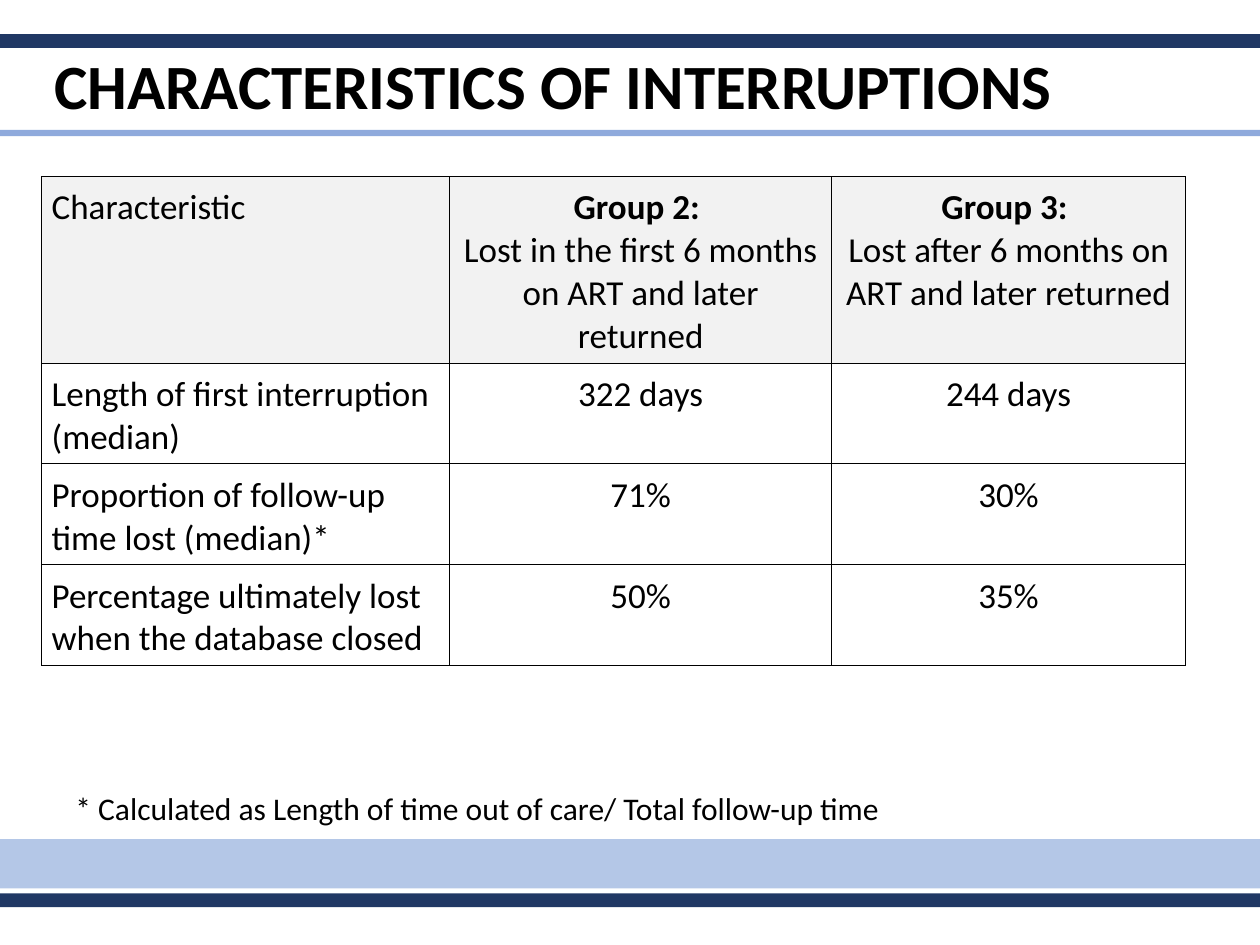
import pptx
import pptx.dml.color
import pptx.enum.shapes
import pptx.enum.text
import pptx.oxml
import pptx.oxml.ns
import pptx.util

RGBColor = pptx.dml.color.RGBColor
Inches = pptx.util.Inches
Pt = pptx.util.Pt
ALIGN = pptx.enum.text.PP_ALIGN
ANCHOR = pptx.enum.text.MSO_ANCHOR

BLACK = RGBColor(0x00, 0x00, 0x00)
WHITE = RGBColor(0xFF, 0xFF, 0xFF)
HEADER_GREY = RGBColor(0xF2, 0xF2, 0xF2)
NAVY = RGBColor(0x20, 0x38, 0x64)
MID_BLUE = RGBColor(0x8F, 0xAA, 0xDC)
PALE_BLUE = RGBColor(0xB4, 0xC7, 0xE7)

SLIDE_WIDTH, SLIDE_HEIGHT = 10, 7.5
BANDS = [
    (6.66, 0.39, PALE_BLUE),
    (7.09, 0.11, NAVY),
    (0.27, 0.11, NAVY),
    (1.03, 0.05, MID_BLUE),
]
COLUMN_WIDTHS = [3.24, 3.03, 2.81]
ROW_HEIGHTS = [1.47, 0.78, 0.78, 0.78]
CELL_MARGINS = {
    "margin_left": Inches(0.08),
    "margin_top": Inches(0.08),
    "margin_right": Inches(0.08),
    "margin_bottom": Inches(0.04),
}
ROWS = [
    [
        ["Characteristic"],
        ["Group 2: ", "Lost in the first 6 months on ART and later returned"],
        ["Group 3: ", "Lost after 6 months on ART and later returned"],
    ],
    [["Length of first interruption (median)"], ["322 days"], ["244 days"]],
    [["Proportion of follow-up time lost (median)*"], ["71%"], ["30%"]],
    [["Percentage ultimately lost when the database closed"], ["50%"], ["35%"]],
]


def set_attributes(target, values):
    """Set each named value on the target."""
    for name, value in values.items():
        setattr(target, name, value)


def write_paragraph(paragraph, text, size, bold=False, alignment=ALIGN.LEFT):
    """Write one formatted run into the paragraph."""
    paragraph.alignment = alignment
    run = paragraph.add_run()
    run.text = text
    set_attributes(run.font, {"name": "Calibri", "size": Pt(size), "bold": bold})
    run.font.color.rgb = BLACK


def add_bands(slide):
    """Draw the full-width bands at the head and foot of the slide."""
    for top, height, color in BANDS:
        band = slide.shapes.add_shape(
            pptx.enum.shapes.MSO_SHAPE.RECTANGLE,
            0, Inches(top), Inches(SLIDE_WIDTH), Inches(height),
        )
        band.shadow.inherit = False
        band.fill.solid()
        band.fill.fore_color.rgb = color
        band.line.fill.background()


def place_title(slide, text, left, top, width, height):
    """Move and format the title placeholder."""
    title = slide.shapes.title
    set_attributes(title, {
        "left": Inches(left), "top": Inches(top),
        "width": Inches(width), "height": Inches(height),
    })
    set_attributes(title.text_frame, {
        "vertical_anchor": ANCHOR.MIDDLE,
        "auto_size": pptx.enum.text.MSO_AUTO_SIZE.NONE,
        "word_wrap": True,
    })
    paragraph = title.text_frame.paragraphs[0]
    paragraph.line_spacing = 0.9
    write_paragraph(paragraph, text, 36, bold=True)


def set_borders(cell):
    """Give the cell a thin black line on all four sides."""
    properties = cell._tc.get_or_add_tcPr()
    for position, side in enumerate(("lnL", "lnR", "lnT", "lnB")):
        border = pptx.oxml.parse_xml(
            f'<a:{side} {pptx.oxml.ns.nsdecls("a")} w="{Pt(0.5)}">'
            f'<a:solidFill><a:srgbClr val="{BLACK}"/></a:solidFill></a:{side}>'
        )
        properties.insert(position, border)


def fill_cell(cell, lines, is_header, alignment):
    """Write the lines of one cell and set its fill, margins and borders."""
    set_attributes(cell, CELL_MARGINS)
    cell.vertical_anchor = ANCHOR.TOP
    cell.fill.solid()
    cell.fill.fore_color.rgb = HEADER_GREY if is_header else WHITE
    set_borders(cell)
    frame = cell.text_frame
    for index, line in enumerate(lines):
        paragraph = frame.add_paragraph() if index else frame.paragraphs[0]
        is_group_name = index < len(lines) - 1
        write_paragraph(paragraph, line, 20, is_group_name, alignment)


def add_interruption_table(slide, left, top):
    """Add the table comparing interruptions in the two groups."""
    table = slide.shapes.add_table(
        len(ROWS), len(COLUMN_WIDTHS), Inches(left), Inches(top),
        Inches(sum(COLUMN_WIDTHS)), Inches(sum(ROW_HEIGHTS)),
    ).table
    set_attributes(table, {"first_row": False, "horz_banding": False})
    for column, width in zip(table.columns, COLUMN_WIDTHS):
        column.width = Inches(width)
    for row_index, (row, height) in enumerate(zip(ROWS, ROW_HEIGHTS)):
        table.rows[row_index].height = Inches(height)
        for column_index, lines in enumerate(row):
            alignment = ALIGN.CENTER if column_index else ALIGN.LEFT
            cell = table.cell(row_index, column_index)
            fill_cell(cell, lines, row_index == 0, alignment)


def add_footnote(slide, text, left, top, width, height):
    """Add the note under the table."""
    footnote = slide.shapes.add_textbox(
        Inches(left), Inches(top), Inches(width), Inches(height)
    )
    set_attributes(footnote.text_frame, {
        "word_wrap": True,
        "auto_size": pptx.enum.text.MSO_AUTO_SIZE.SHAPE_TO_FIT_TEXT,
    })
    write_paragraph(footnote.text_frame.paragraphs[0], text, 18)


def main():
    """Build the slide and save it."""
    presentation = pptx.Presentation()
    presentation.slide_width = Inches(SLIDE_WIDTH)
    presentation.slide_height = Inches(SLIDE_HEIGHT)
    slide = presentation.slides.add_slide(presentation.slide_layouts[5])
    add_bands(slide)
    place_title(slide, "CHARACTERISTICS OF INTERRUPTIONS", 0.33, 0.41, 9.42, 0.59)
    add_interruption_table(slide, 0.33, 1.4)
    add_footnote(
        slide,
        "* Calculated as Length of time out of care/ Total follow-up time",
        0.5, 6.21, 7.71, 0.4,
    )
    presentation.save("out.pptx")


if __name__ == "__main__":
    main()
